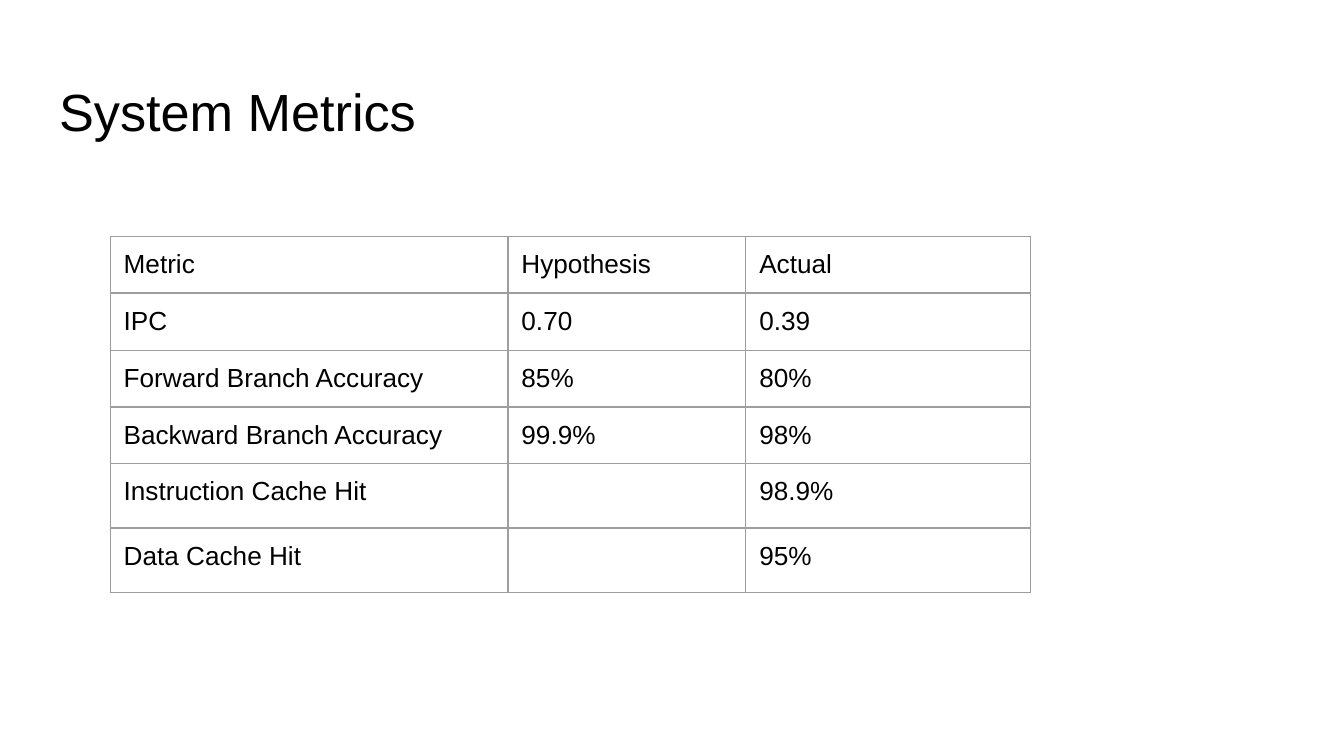
from lxml import etree
from pptx import Presentation
from pptx.dml.color import RGBColor
from pptx.enum.text import MSO_ANCHOR, MSO_AUTO_SIZE, PP_ALIGN
from pptx.oxml.ns import qn
from pptx.util import Inches, Pt

TOP = MSO_ANCHOR.TOP
NO_FIT = MSO_AUTO_SIZE.NONE
LEFT = PP_ALIGN.LEFT

BLACK = RGBColor(0x00, 0x00, 0x00)
GREY = RGBColor(0x9E, 0x9E, 0x9E)
FONT = "Arial"
INSET = Inches(0.1)

COL_WIDTHS = [2.96, 1.77, 2.12]
ROW_HEIGHTS = [0.42, 0.43, 0.42, 0.42, 0.48, 0.48]
METRICS = [
    ("Metric", "Hypothesis", "Actual"),
    ("IPC", "0.70", "0.39"),
    ("Forward Branch Accuracy", "85%", "80%"),
    ("Backward Branch Accuracy", "99.9%", "98%"),
    ("Instruction Cache Hit", "", "98.9%"),
    ("Data Cache Hit", "", "95%"),
]


def style_paragraph(p, size):
    p.alignment = LEFT
    p.font.name = FONT
    p.font.size = Pt(size)
    p.font.color.rgb = BLACK


def set_borders(cell, color, width):
    tc_pr = cell._tc.get_or_add_tcPr()
    for i, side in enumerate(("a:lnL", "a:lnR", "a:lnT", "a:lnB")):
        ln = etree.Element(qn(side), w=str(Pt(width)))
        fill = etree.SubElement(ln, qn("a:solidFill"))
        etree.SubElement(fill, qn("a:srgbClr"), val=str(color))
        tc_pr.insert(i, ln)


def add_title(s, text, left, top, width, height):
    sp = s.shapes.title
    sp.left, sp.top = Inches(left), Inches(top)
    sp.width, sp.height = Inches(width), Inches(height)
    tf = sp.text_frame
    tf.text = text
    tf.word_wrap = True
    tf.auto_size = NO_FIT
    tf.vertical_anchor = TOP
    tf.margin_left = tf.margin_right = INSET
    tf.margin_top, tf.margin_bottom = INSET, 0
    style_paragraph(tf.paragraphs[0], 28)


def add_metrics_table(s, left, top):
    table = s.shapes.add_table(
        len(METRICS), len(COL_WIDTHS), Inches(left), Inches(top),
        Inches(sum(COL_WIDTHS)), Inches(sum(ROW_HEIGHTS))).table
    table.first_row = table.horz_banding = False
    for col, width in zip(table.columns, COL_WIDTHS):
        col.width = Inches(width)
    for row, height, values in zip(table.rows, ROW_HEIGHTS, METRICS):
        row.height = Inches(height)
        for cell, value in zip(row.cells, values):
            cell.text = value
            cell.fill.background()
            cell.vertical_anchor = TOP
            cell.margin_left = cell.margin_right = INSET
            cell.margin_top = cell.margin_bottom = INSET
            style_paragraph(cell.text_frame.paragraphs[0], 14)
            set_borders(cell, GREY, 0.75)


def main():
    prs = Presentation()
    prs.slide_width = Inches(10)
    prs.slide_height = prs.slide_width * 9 // 16
    s = prs.slides.add_slide(prs.slide_layouts[5])
    add_title(s, "System Metrics", 0.34, 0.49, 9.32, 0.63)
    add_metrics_table(s, 0.82, 1.76)
    prs.save("out.pptx")


if __name__ == "__main__":
    main()
